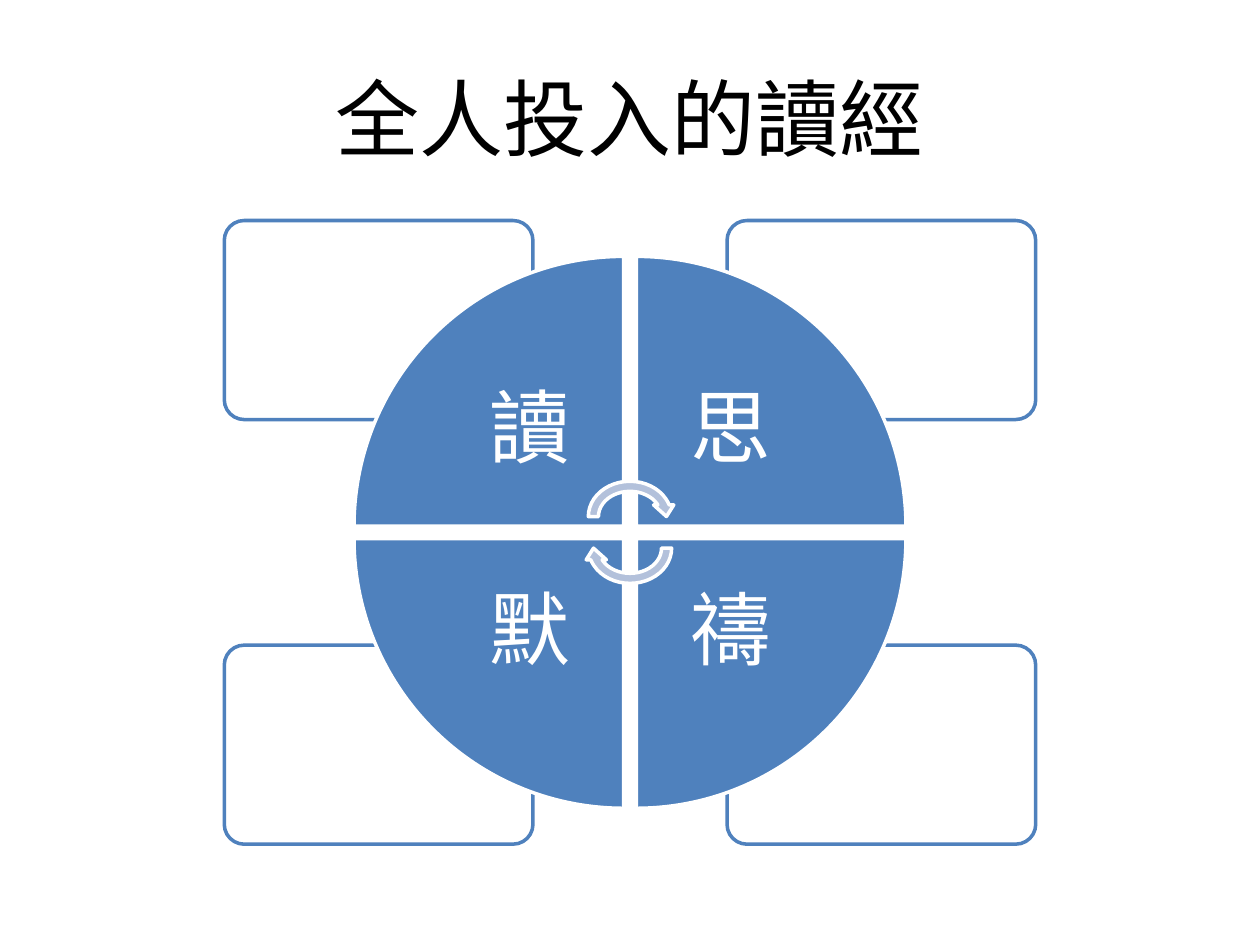
"""Build a slide with a four-part cycle diagram under a title."""
from collections import namedtuple

from lxml import etree
from pptx import Presentation, util as u
from pptx.dml.color import RGBColor
from pptx.enum import shapes, text
from pptx.oxml.ns import qn

COLOURS = {"ink": "000000", "paper": "FFFFFF", "wedge": "4F81BD", "arrow": "B3C1DB"}
FONT = "Lato"
COLUMNS, ROWS = 100, 75
CELL = u.Inches(0.1)
Box = namedtuple("Box", "left top width height")
TITLE_BOX = Box(5, 3, 90, 12.5)
CYCLE_BOX = Box(17.8, 17.5, 64.4, 49.5)
QUADRANTS = [("讀", 0, 0, 0), ("思", 1, 0, 90), ("禱", 1, 1, 180), ("默", 0, 1, 270)]


def colour(name):
    """Return the named colour."""
    return RGBColor.from_string(COLOURS[name])


def lengths(box):
    """Turn a box in grid cells into slide lengths."""
    return [round(value * CELL) for value in box]


def inset(box, across, down):
    """Shrink a box evenly on opposite sides."""
    return Box(box.left + across, box.top + down,
               box.width - 2 * across, box.height - 2 * down)


def corner(box, column, row, width, height):
    """Return a part that touches the chosen corner of a box."""
    return Box(box.left + column * (box.width - width),
               box.top + row * (box.height - height), width, height)


def add_part(slide, kind, box, fill, line, rotation=0):
    """Add a flat preset shape with a two-point outline."""
    shape = slide.shapes.add_shape(kind, *lengths(box))
    shape.shadow.inherit = False
    shape.rotation = rotation
    shape.fill.solid()
    shape.fill.fore_color.rgb = colour(fill)
    shape.line.color.rgb = colour(line)
    shape.line.width = u.Pt(2)
    return shape


def add_words(slide, box, words, size, ink, margin):
    """Add a centred line of text and return its paragraph."""
    frame = slide.shapes.add_textbox(*lengths(box)).text_frame
    frame.word_wrap = True
    frame.vertical_anchor = text.MSO_ANCHOR.MIDDLE
    frame.margin_left = frame.margin_right = u.Inches(margin)
    frame.margin_top = frame.margin_bottom = u.Inches(margin)
    paragraph = frame.paragraphs[0]
    paragraph.text = words
    paragraph.alignment = text.PP_ALIGN.CENTER
    paragraph.font.name = FONT
    paragraph.font.size = u.Pt(size)
    paragraph.font.color.rgb = colour(ink)
    return paragraph


def add_card(slide, box):
    """Add a slightly transparent rounded card."""
    card = add_part(slide, shapes.MSO_SHAPE.ROUNDED_RECTANGLE, box, "paper", "wedge")
    card.adjustments[0] = 0.1
    fill = card._element.spPr.find(qn("a:solidFill"))
    etree.SubElement(fill[0], qn("a:alpha"), val="90000")


def add_cycle(slide, box):
    """Add corner cards, four labelled wedges and two turning arrows."""
    circle = inset(box, 10.3, 2.85)
    labels = inset(box, 16.6, 9.1)
    arrows = inset(box, 28.5, 20.3)
    for _, column, row, _ in reversed(QUADRANTS):
        add_card(slide, corner(box, column, row, 24.5, 15.8))
    for word, column, row, rotation in QUADRANTS:
        add_part(slide, shapes.MSO_SHAPE.PIE_WEDGE,
                 corner(circle, column, row, 21.4, 21.4), "wedge", "paper", rotation)
        label = add_words(slide, corner(labels, column, row, 15.2, 15.2),
                          word, 46, "paper", 0.36)
        label.line_spacing = 0.9
    for row in range(2):
        add_part(slide, shapes.MSO_SHAPE.CIRCULAR_ARROW,
                 corner(arrows, 0, row, 7.4, 6.4), "arrow", "paper", 180 * row)


def main():
    """Build and save the presentation."""
    presentation = Presentation()
    presentation.slide_width = COLUMNS * CELL
    presentation.slide_height = ROWS * CELL
    slide = presentation.slides.add_slide(presentation.slide_layouts[6])
    add_words(slide, TITLE_BOX, "全人投入的讀經", 48, "ink", 0.1)
    add_cycle(slide, CYCLE_BOX)
    presentation.save("out.pptx")


if __name__ == "__main__":
    main()
